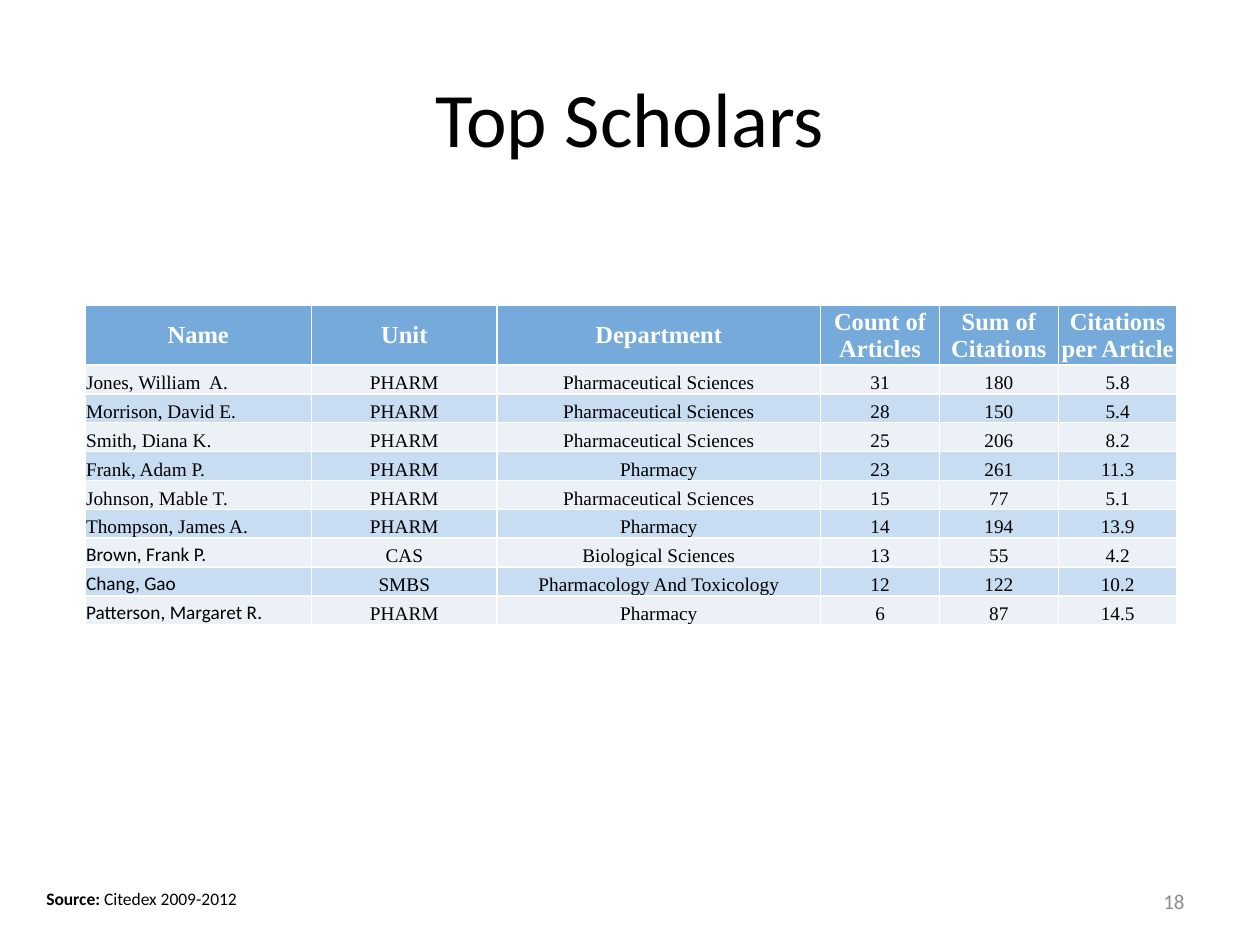
from lxml import etree
from pptx import Presentation
from pptx.dml.color import RGBColor
from pptx.enum import text
from pptx.oxml import ns
from pptx.util import Pt

BLACK = RGBColor(0x00, 0x00, 0x00)
WHITE = RGBColor(0xFF, 0xFF, 0xFF)
GREY = RGBColor(0x8C, 0x8C, 0x8C)
HEADER_BLUE = RGBColor(0x75, 0xAA, 0xDB)
BAND_COLOURS = (RGBColor(0xEC, 0xF1, 0xF8), RGBColor(0xC8, 0xDD, 0xF1))

SANS, SERIF = "Calibri", "Times New Roman"
LEFT, CENTER, RIGHT = text.PP_ALIGN.LEFT, text.PP_ALIGN.CENTER, text.PP_ALIGN.RIGHT
TOP, MIDDLE, BOTTOM = text.MSO_ANCHOR.TOP, text.MSO_ANCHOR.MIDDLE, text.MSO_ANCHOR.BOTTOM

COLUMN_WIDTHS = (129.6, 105.9, 185, 67.9, 67.9, 67.9)
HEADER_HEIGHT, ROW_HEIGHT = 33, 16.5
CELL_MARGINS = {"margin_left": Pt(0.7), "margin_right": Pt(0.7),
                "margin_top": Pt(0.7), "margin_bottom": Pt(0)}

HEADINGS = ("Name", "Unit", "Department", "Count of Articles",
            "Sum of Citations", "Citations per Article")
SCHOLARS = (
    ("Jones, William  A.", "PHARM", "Pharmaceutical Sciences", "31", "180", "5.8"),
    ("Morrison, David E.", "PHARM", "Pharmaceutical Sciences", "28", "150", "5.4"),
    ("Smith, Diana K.", "PHARM", "Pharmaceutical Sciences", "25", "206", "8.2"),
    ("Frank, Adam P.", "PHARM", "Pharmacy", "23", "261", "11.3"),
    ("Johnson, Mable T.", "PHARM", "Pharmaceutical Sciences", "15", "77", "5.1"),
    ("Thompson, James A.", "PHARM", "Pharmacy", "14", "194", "13.9"),
    ("Brown, Frank P.", "CAS", "Biological Sciences", "13", "55", "4.2"),
    ("Chang, Gao", "SMBS", "Pharmacology And Toxicology", "12", "122", "10.2"),
    ("Patterson, Margaret R.", "PHARM", "Pharmacy", "6", "87", "14.5"),
)
FIRST_SANS_NAME = 6


def set_attributes(target, values):
    """Set every attribute named in a dict of format values."""
    for name, value in values.items():
        setattr(target, name, value)


def add_run(paragraph, wording, colour, **font_values):
    """Append a formatted run to a paragraph."""
    run = paragraph.add_run()
    run.text = wording
    set_attributes(run.font, font_values)
    run.font.color.rgb = colour


def add_text(slide, box, runs, colour, size, alignment=LEFT, anchor=TOP):
    """Place one line of (wording, bold) runs in a box."""
    frame = slide.shapes.add_textbox(*map(Pt, box)).text_frame
    set_attributes(frame, {"word_wrap": True, "vertical_anchor": anchor})
    paragraph = frame.paragraphs[0]
    paragraph.alignment = alignment
    for wording, bold in runs:
        add_run(paragraph, wording, colour, name=SANS, size=Pt(size), bold=bold)


def add_borders(cell):
    """Draw thin white lines on all four sides of a cell."""
    properties = cell._tc.get_or_add_tcPr()
    for side in ("a:lnL", "a:lnR", "a:lnT", "a:lnB"):
        line = etree.SubElement(properties, ns.qn(side), w=str(Pt(1)))
        fill = etree.SubElement(line, ns.qn("a:solidFill"))
        etree.SubElement(fill, ns.qn("a:srgbClr"), val=str(WHITE))


def fill_cell(cell, wording, background, colour, alignment, anchor, **font_values):
    """Write and format one table cell."""
    set_attributes(cell, CELL_MARGINS | {"vertical_anchor": anchor})
    add_borders(cell)
    cell.fill.solid()
    cell.fill.fore_color.rgb = background
    paragraph = cell.text_frame.paragraphs[0]
    paragraph.alignment = alignment
    add_run(paragraph, wording, colour, **font_values)


def add_scholar_table(slide, left, top):
    """Build the table of scholars with its top left corner at a point."""
    height = HEADER_HEIGHT + ROW_HEIGHT * len(SCHOLARS)
    box = map(Pt, (left, top, sum(COLUMN_WIDTHS), height))
    table = slide.shapes.add_table(len(SCHOLARS) + 1, len(HEADINGS), *box).table
    set_attributes(table, {"first_row": False, "horz_banding": False})
    for column, width in zip(table.columns, COLUMN_WIDTHS):
        column.width = Pt(width)
    for index, row in enumerate(table.rows):
        row.height = Pt(ROW_HEIGHT if index else HEADER_HEIGHT)
    for cell, heading in zip(table.rows[0].cells, HEADINGS):
        fill_cell(cell, heading, HEADER_BLUE, WHITE, CENTER, MIDDLE,
                  name=SERIF, size=Pt(14), bold=True)
    for index, scholar in enumerate(SCHOLARS):
        for column, wording in enumerate(scholar):
            is_name = column == 0
            font = SANS if is_name and index >= FIRST_SANS_NAME else SERIF
            fill_cell(table.cell(index + 1, column), wording, BAND_COLOURS[index % 2],
                      BLACK, LEFT if is_name else CENTER, BOTTOM,
                      name=font, size=Pt(11), bold=False)


def main():
    """Build and save the slide."""
    presentation = Presentation()
    set_attributes(presentation, {"slide_width": Pt(720), "slide_height": Pt(540)})
    slide = presentation.slides.add_slide(presentation.slide_layouts[6])
    add_text(slide, (36, 21.6, 648, 90), [("Top Scholars", False)], BLACK, 44, CENTER, MIDDLE)
    add_scholar_table(slide, 48.5, 174.2)
    add_text(slide, (19.4, 504, 268.6, 19.4),
             [("Source: ", True), ("Citedex 2009-2012", False)], BLACK, 10)
    add_text(slide, (516, 500.5, 168, 28.8), [("18", False)], GREY, 12, RIGHT, MIDDLE)
    presentation.save("out.pptx")


if __name__ == "__main__":
    main()
